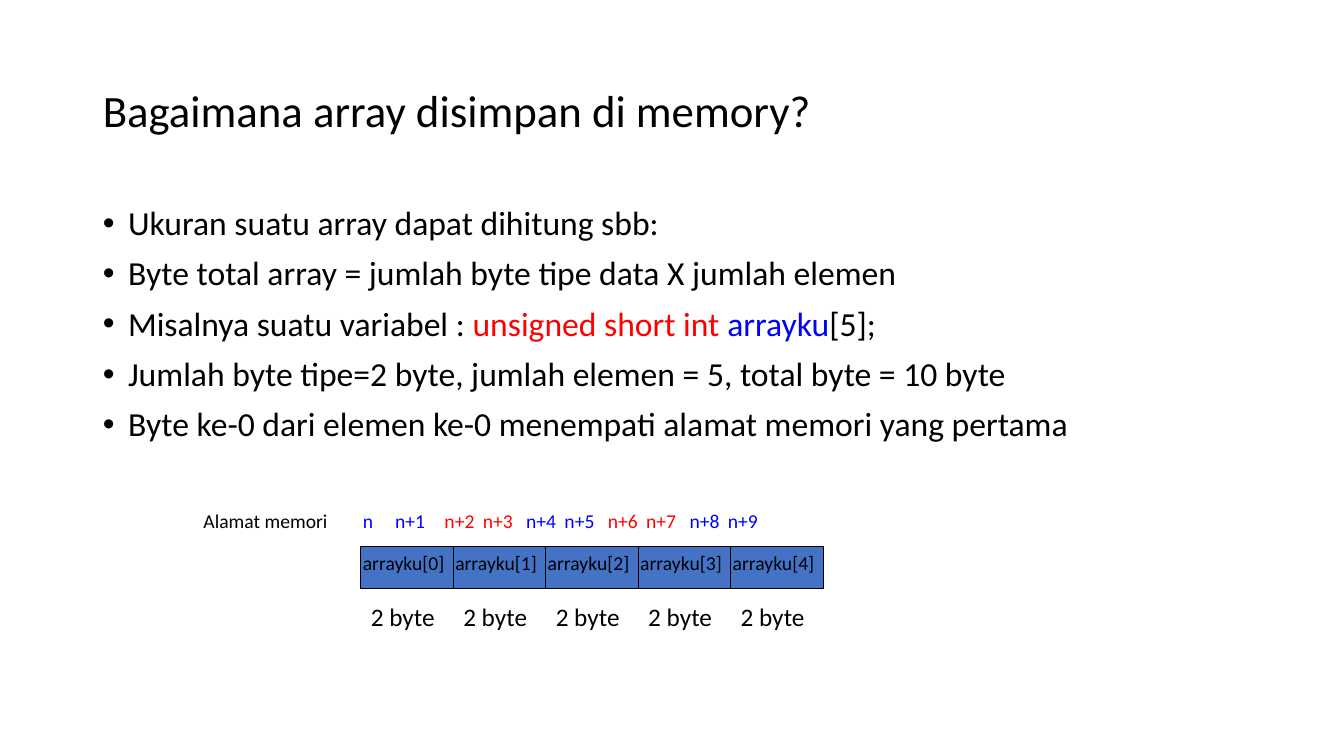
import pptx
import pptx.util
import pptx.dml.color
import pptx.enum.shapes
import pptx.enum.text
import pptx.oxml
import pptx.oxml.ns
from dataclasses import dataclass

Inches = pptx.util.Inches
Pt = pptx.util.Pt


@dataclass(frozen=True)
class Theme:
    font: str = "Calibri"
    black: str = "000000"
    red: str = "FF0000"
    blue: str = "0000FF"
    cell: str = "4472C4"
    title_size: int = 32
    body_size: int = 24
    byte_size: int = 18
    label_size: int = 14


THEME = Theme()
TITLE = "Bagaimana array disimpan di memory?"
BULLETS = [
    [("Ukuran suatu array dapat dihitung sbb:", THEME.black)],
    [("Byte total array = jumlah byte tipe data X jumlah elemen", THEME.black)],
    [
        ("Misalnya suatu variabel : ", THEME.black),
        ("unsigned short int ", THEME.red),
        ("arrayku", THEME.blue),
        ("[5];", THEME.black),
    ],
    [("Jumlah byte tipe=2 byte, jumlah elemen = 5, total byte = 10 byte", THEME.black)],
    [("Byte ke-0 dari elemen ke-0 menempati alamat memori yang pertama", THEME.black)],
]
ADDRESS_LABEL = "Alamat memori"
ADDRESSES = [
    ("n\tn+1\t", THEME.blue),
    ("n+2\tn+3\t", THEME.red),
    ("n+4\tn+5\t", THEME.blue),
    ("n+6\tn+7\t", THEME.red),
    ("n+8\tn+9", THEME.blue),
]
ELEMENTS = [f"arrayku[{index}]" for index in range(5)]
ELEMENT_BYTES = "2 byte"

CELL_LEFT, CELL_TOP, CELL_WIDTH, CELL_HEIGHT = 3.58, 5.42, 0.917, 0.42
ADDRESS_TOP, BYTE_TOP = 5, 5.92
FIRST_STOP, PAIR_STEP, PAIR_GAP = 0.32, 0.81, 0.38


def color(code):
    return pptx.dml.color.RGBColor.from_string(code)


def write(para, spans, size):
    for text, code in spans:
        span = para.add_run()
        span.text = text
        span.font.name = THEME.font
        span.font.size = Pt(size)
        span.font.color.rgb = color(code)


def place(shape, left, top, width, height):
    shape.left, shape.top = Inches(left), Inches(top)
    shape.width, shape.height = Inches(width), Inches(height)


def add_child(para, xml):
    namespace = pptx.oxml.ns.nsdecls("a")
    properties = para._p.get_or_add_pPr()
    properties.append(pptx.oxml.parse_xml(xml.replace("/>", f" {namespace}/>", 1)
                      if xml.endswith("/>") and xml.count("<") == 1
                      else xml.replace(">", f" {namespace}>", 1)))
    return properties


def add_label(page, spans, left, top, width, height, size, wrap=False):
    box = page.shapes.add_textbox(Inches(left), Inches(top), Inches(width), Inches(height))
    frame = box.text_frame
    frame.word_wrap = wrap
    frame.auto_size = pptx.enum.text.MSO_AUTO_SIZE.SHAPE_TO_FIT_TEXT
    write(frame.paragraphs[0], spans, size)
    return frame.paragraphs[0]


def fill_title(page):
    title = page.shapes.title
    place(title, 0.92, 0.4, 11.5, 1.45)
    frame = title.text_frame
    frame.auto_size = pptx.enum.text.MSO_AUTO_SIZE.NONE
    frame.vertical_anchor = pptx.enum.text.MSO_ANCHOR.MIDDLE
    para = frame.paragraphs[0]
    para.alignment = pptx.enum.text.PP_ALIGN.LEFT
    para.line_spacing = 0.9
    write(para, [(TITLE, THEME.black)], THEME.title_size)


def fill_body(page):
    body = page.placeholders[1]
    place(body, 0.92, 2, 11.5, 4.76)
    frame = body.text_frame
    frame.auto_size = pptx.enum.text.MSO_AUTO_SIZE.NONE
    for index, spans in enumerate(BULLETS):
        para = frame.add_paragraph() if index else frame.paragraphs[0]
        para.line_spacing = 0.9
        para.space_before = Pt(10)
        properties = add_child(para, '<a:buChar char="•"/>')
        properties.set("marL", str(Inches(0.25)))
        properties.set("indent", str(Inches(-0.25)))
        write(para, spans, THEME.body_size)


def draw_array(page):
    lefts = [CELL_LEFT + index * CELL_WIDTH for index in range(len(ELEMENTS))]
    for left in lefts:
        cell = page.shapes.add_shape(
            pptx.enum.shapes.MSO_SHAPE.RECTANGLE,
            Inches(left), Inches(CELL_TOP), Inches(CELL_WIDTH), Inches(CELL_HEIGHT))
        cell.shadow.inherit = False
        cell.fill.solid()
        cell.fill.fore_color.rgb = color(THEME.cell)
        cell.line.color.rgb = color(THEME.black)
        cell.line.width = Pt(0.75)
    for left, element in zip(lefts, ELEMENTS):
        add_label(page, [(element, THEME.black)], left - 0.08, CELL_TOP, 1.02, 0.34,
                  THEME.label_size)
        add_label(page, [(ELEMENT_BYTES, THEME.black)], left, BYTE_TOP, 0.84, 0.4,
                  THEME.byte_size)


def draw_addresses(page):
    add_label(page, [(ADDRESS_LABEL, THEME.black)], 1.92, ADDRESS_TOP, 1.44, 0.34,
              THEME.label_size)
    para = add_label(page, ADDRESSES, 3.5, ADDRESS_TOP, 4.29, 0.34, THEME.label_size, True)
    stops = [FIRST_STOP] + [pair * PAIR_STEP + gap
                            for pair in range(1, len(ADDRESSES)) for gap in (0, PAIR_GAP)]
    tabs = "".join(f'<a:tab pos="{Inches(stop)}" algn="l"/>' for stop in stops)
    add_child(para, f"<a:tabLst>{tabs}</a:tabLst>")


def main():
    deck = pptx.Presentation()
    deck.slide_width, deck.slide_height = Inches(13.33), Inches(7.5)
    page = deck.slides.add_slide(deck.slide_layouts[1])
    fill_title(page)
    fill_body(page)
    draw_array(page)
    draw_addresses(page)
    deck.save("out.pptx")


if __name__ == "__main__":
    main()
